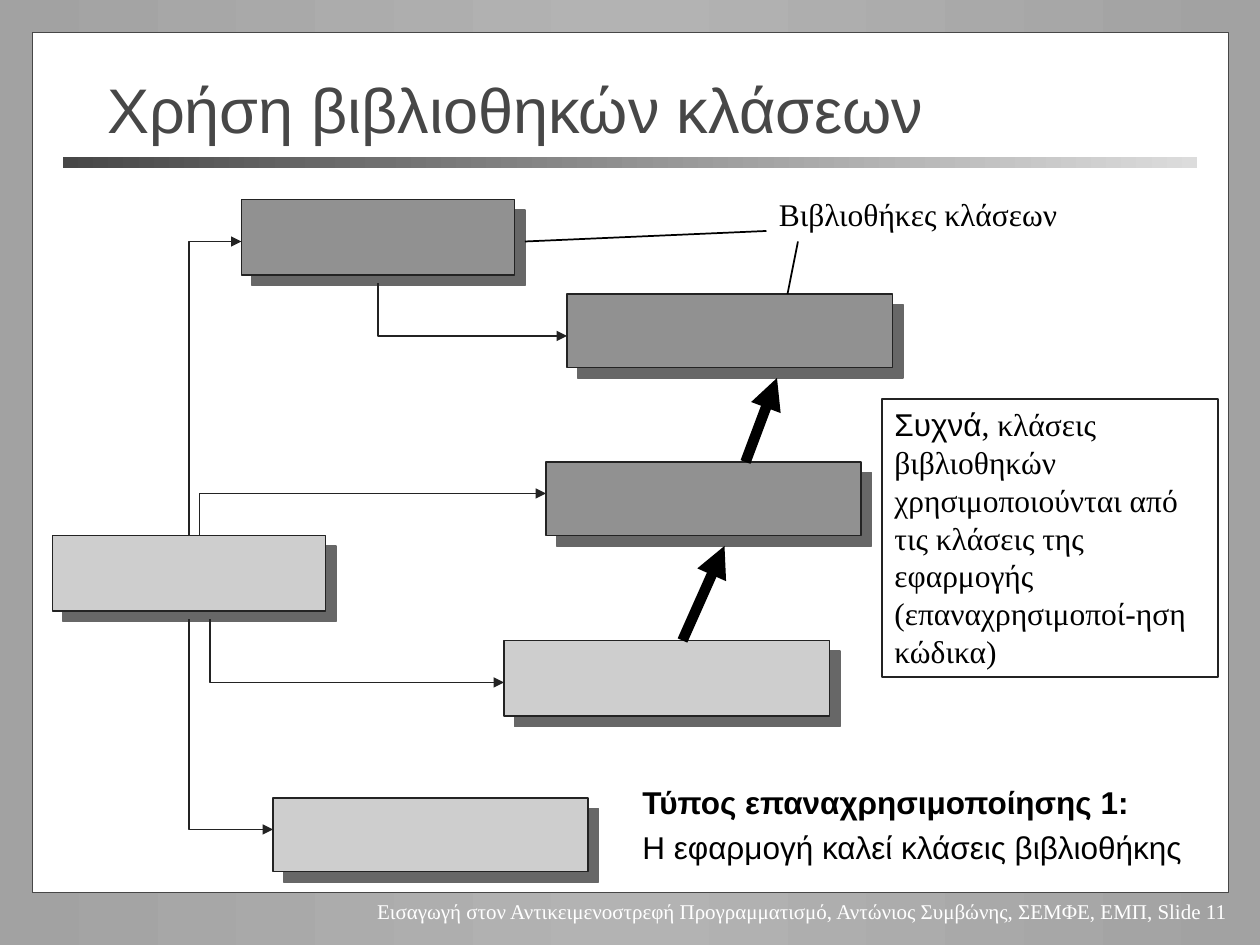
from copy import deepcopy
from dataclasses import dataclass
from typing import NamedTuple

from lxml import etree
from pptx import Presentation
from pptx.dml.color import RGBColor
from pptx.enum.shapes import MSO_CONNECTOR, MSO_SHAPE
from pptx.enum.text import MSO_ANCHOR, MSO_AUTO_SIZE, PP_ALIGN
from pptx.oxml.ns import qn
from pptx.util import Inches, Pt

RECTANGLE = MSO_SHAPE.RECTANGLE
STRAIGHT = MSO_CONNECTOR.STRAIGHT
LEFT, RIGHT = PP_ALIGN.LEFT, PP_ALIGN.RIGHT
MIDDLE = MSO_ANCHOR.MIDDLE
GROW, FIXED = MSO_AUTO_SIZE.SHAPE_TO_FIT_TEXT, MSO_AUTO_SIZE.NONE
COLUMNS, ROWS = 120, 90
WIDTH, HEIGHT = Inches(10), Inches(7.5)


@dataclass(frozen=True)
class Theme:
    backdrop: tuple = ("A2A2A2", "B3B3B3", "A2A2A2")
    bar: tuple = ("474747", "DCDCDC")
    paper: str = "FFFFFF"
    heading: str = "474747"
    outline: str = "232323"
    ink: str = "000000"
    library: str = "919191"
    application: str = "CECECE"
    shadow: str = "676767"
    sans: str = "Arial"
    serif: str = "Times New Roman"
    title_size: int = 36
    text_size: int = 18
    footer_size: int = 12
    thin: int = 1
    thick: int = 6


THEME = Theme()


class Area(NamedTuple):
    column: float
    row: float
    columns: float
    rows: float


class Point(NamedTuple):
    column: float
    row: float


class Span(NamedTuple):
    text: str
    font: str
    size: int = THEME.text_size
    color: str = THEME.ink
    bold: bool = False


@dataclass(frozen=True)
class ClassBox:
    area: Area
    color: str


@dataclass(frozen=True)
class Elbow:
    start: Point
    corner: Point
    end: Point


@dataclass(frozen=True)
class Straight:
    start: Point
    end: Point
    width: int
    arrow: bool


@dataclass(frozen=True)
class Note:
    area: Area
    paragraphs: tuple
    wrap: bool = True
    outlined: bool = False
    align: PP_ALIGN = LEFT
    space_before: float = 4


CLASS_BOXES = (
    ClassBox(Area(23, 19, 26, 7.2), THEME.library),
    ClassBox(Area(54, 28, 31, 7), THEME.library),
    ClassBox(Area(52, 44, 30, 7), THEME.library),
    ClassBox(Area(5, 51, 26, 7.2), THEME.application),
    ClassBox(Area(48, 61, 31, 7.2), THEME.application),
    ClassBox(Area(26, 76, 30, 7), THEME.application),
)
ELBOWS = (
    Elbow(Point(36, 27), Point(36, 32), Point(54, 32)),
    Elbow(Point(19, 51), Point(19, 47), Point(52, 47)),
    Elbow(Point(18, 51), Point(18, 23), Point(23, 23)),
    Elbow(Point(18, 59), Point(18, 79), Point(26, 79)),
    Elbow(Point(20, 59), Point(20, 65), Point(48, 65)),
)
STRAIGHTS = (
    Straight(Point(71, 44), Point(74, 36), THEME.thick, True),
    Straight(Point(65, 61), Point(69, 52), THEME.thick, True),
    Straight(Point(73, 22), Point(50, 23), THEME.thin, False),
    Straight(Point(76, 23), Point(75, 28), THEME.thin, False),
)
FOOTER = Note(Area(30, 85, 88.1, 3.6), ((Span(
    "Εισαγωγή στον Αντικειμενοστρεφή Προγραμματισμό, Αντώνιος Συμβώνης, ΣΕΜΦΕ, ΕΜΠ, Slide 11",
    THEME.serif, THEME.footer_size, THEME.paper),),), wrap=False, align=RIGHT, space_before=0)
NOTES = (
    Note(Area(84, 38, 32, 26.5), ((
        Span("Συχνά", THEME.sans),
        Span(", κλάσεις βιβλιοθηκών χρησιμοποιούνται από τις κλάσεις της εφαρμογής "
             "(επαναχρησιμοποί-ηση κώδικα)", THEME.serif)),), outlined=True),
    Note(Area(73, 18, 33.2, 4.8), ((Span("Βιβλιοθήκες κλάσεων", THEME.serif),),)),
    Note(Area(60, 74, 54.6, 9.1), (
        (Span("Τύπος επαναχρησιμοποίησης 1:", THEME.sans, bold=True),),
        (Span("Η εφαρμογή καλεί κλάσεις βιβλιοθήκης", THEME.sans),)), wrap=False),
)
TITLE = Span("Χρήση βιβλιοθηκών κλάσεων", THEME.sans, THEME.title_size, THEME.heading)


def across(columns: float) -> int:
    return round(WIDTH * columns / COLUMNS)


def down(rows: float) -> int:
    return round(HEIGHT * rows / ROWS)


def place(area: Area) -> tuple:
    return across(area.column), down(area.row), across(area.columns), down(area.rows)


def spot(point: Point) -> tuple:
    return across(point.column), down(point.row)


def rgb(color: str) -> RGBColor:
    return RGBColor.from_string(color)


def paint_line(line, color: str, width: int) -> None:
    line.color.rgb = rgb(color)
    line.width = Pt(width)


def paint_gradient(fill, element, colors: tuple) -> None:
    fill.gradient()
    fill.gradient_angle = 0
    stop_list = element.find(".//" + qn("a:gsLst"))
    while len(stop_list) < len(colors):
        stop_list.append(deepcopy(stop_list[0]))
    for index, (stop, color) in enumerate(zip(fill.gradient_stops, colors)):
        stop.color.rgb = rgb(color)
        stop.position = index / (len(colors) - 1)


def add_arrowhead(shape) -> None:
    outline = shape._element.spPr.find(qn("a:ln"))
    etree.SubElement(outline, qn("a:tailEnd"), type="triangle")


def add_rectangle(page, area: Area):
    box = page.shapes.add_shape(RECTANGLE, *place(area))
    box.shadow.inherit = False
    return box


def add_class_box(page, item: ClassBox) -> None:
    box = add_rectangle(page, item.area)
    box.fill.solid()
    box.fill.fore_color.rgb = rgb(item.color)
    paint_line(box.line, THEME.outline, THEME.thin)
    effects = box._element.spPr.find(qn("a:effectLst"))
    shadow = etree.SubElement(effects, qn("a:outerShdw"), dist=str(Pt(8.5)),
                              dir="2700000", algn="ctr", rotWithShape="0")
    etree.SubElement(shadow, qn("a:srgbClr"), val=THEME.shadow)


def add_elbow(page, item: Elbow) -> None:
    builder = page.shapes.build_freeform(*spot(item.start))
    builder.add_line_segments([spot(item.corner), spot(item.end)], close=False)
    elbow = builder.convert_to_shape()
    elbow.shadow.inherit = False
    elbow.fill.background()
    paint_line(elbow.line, THEME.outline, THEME.thin)
    add_arrowhead(elbow)


def add_straight(page, item: Straight) -> None:
    connector = page.shapes.add_connector(STRAIGHT, *spot(item.start), *spot(item.end))
    paint_line(connector.line, THEME.ink, item.width)
    if item.arrow:
        add_arrowhead(connector)
    etree.SubElement(connector._element.spPr, qn("a:effectLst"))


def add_span(para, item: Span) -> None:
    span = para.add_run()
    span.text = item.text
    span.font.name = item.font
    span.font.size = Pt(item.size)
    span.font.bold = item.bold
    span.font.color.rgb = rgb(item.color)


def add_note(page, item: Note) -> None:
    box = page.shapes.add_textbox(*place(item.area))
    if item.outlined:
        paint_line(box.line, THEME.outline, THEME.thin)
    frame = box.text_frame
    frame.word_wrap = item.wrap
    frame.auto_size = GROW
    for index, spans in enumerate(item.paragraphs):
        para = frame.add_paragraph() if index else frame.paragraphs[0]
        para.alignment = item.align
        para.space_before = Pt(item.space_before)
        for span in spans:
            add_span(para, span)


def add_backdrop(page) -> None:
    paint_gradient(page.background.fill, page._element, THEME.backdrop)
    paper = add_rectangle(page, Area(3.1, 3.1, 113.9, 81.9))
    paper.fill.solid()
    paper.fill.fore_color.rgb = rgb(THEME.paper)
    paint_line(paper.line, THEME.heading, THEME.thin)
    bar = add_rectangle(page, Area(6, 15, 108, 1))
    paint_gradient(bar.fill, bar._element, THEME.bar)
    bar.line.fill.background()


def add_title(page) -> None:
    title = page.shapes.title
    page.shapes._spTree.append(title._element)
    title.left, title.top, title.width, title.height = place(Area(9, 6.6, 102, 7.4))
    frame = title.text_frame
    frame.auto_size = FIXED
    frame.vertical_anchor = MIDDLE
    frame.paragraphs[0].alignment = LEFT
    add_span(frame.paragraphs[0], TITLE)


def main() -> None:
    deck = Presentation()
    deck.slide_width, deck.slide_height = WIDTH, HEIGHT
    page = deck.slides.add_slide(deck.slide_layouts[5])
    add_backdrop(page)
    add_note(page, FOOTER)
    add_title(page)
    for draw, items in ((add_class_box, CLASS_BOXES), (add_elbow, ELBOWS),
                        (add_straight, STRAIGHTS), (add_note, NOTES)):
        for item in items:
            draw(page, item)
    deck.save("out.pptx")


if __name__ == "__main__":
    main()
